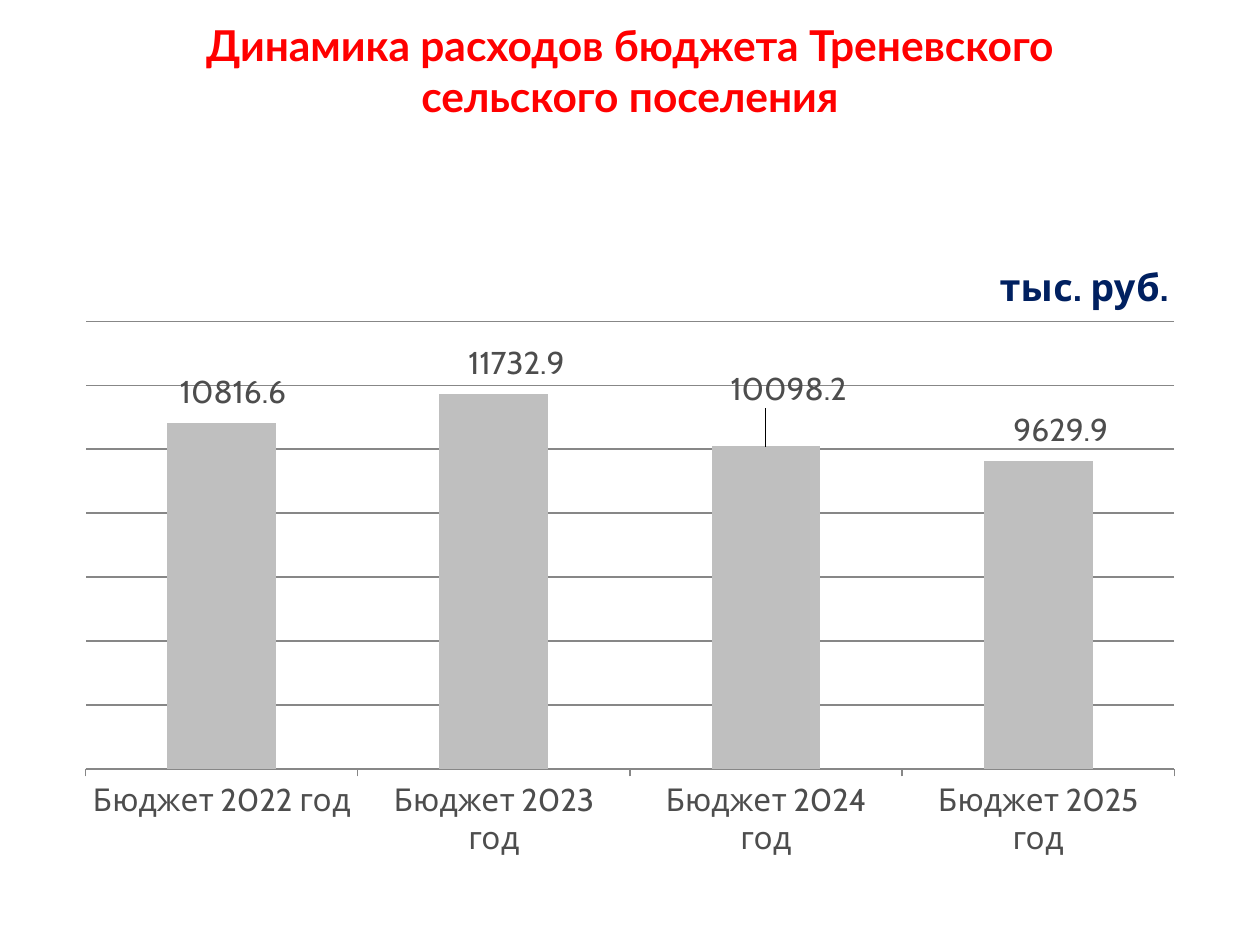
import dataclasses

import pptx
import pptx.chart.data
import pptx.dml.color
import pptx.enum.chart
import pptx.enum.text
import pptx.oxml
import pptx.oxml.ns
import pptx.util

Cm = pptx.util.Cm
Pt = pptx.util.Pt
qn = pptx.oxml.ns.qn


@dataclasses.dataclass(frozen=True)
class Theme:
    red: str = "FF0000"
    navy: str = "002060"
    text: str = "4D4D4D"
    bar: str = "BFBFBF"
    grid: str = "878787"
    head_font: str = "Lato"
    font: str = "Cabin"
    head: float = 24.3
    unit: float = 21.6
    body: float = 18


THEME = Theme()
COSTS = {2022: 10816.6, 2023: 11732.9, 2024: 10098.2, 2025: 9629.9}
SHIFTS = [(0.01, -0.01), (0.02, -0.01), (0.02, -0.05), (0.02, -0.01)]


def tint(color, code):
    color.rgb = pptx.dml.color.RGBColor.from_string(code)


def style(font, name, size, code, bold=False):
    font.name = name
    font.size = Pt(size)
    font.bold = bold
    tint(font.color, code)


def layout(**parts):
    body = "".join(f'<c:{tag} val="{val}"/>' for tag, val in parts.items())
    return pptx.oxml.parse_xml(
        f'<c:layout {pptx.oxml.ns.nsdecls("c")}>'
        f"<c:manualLayout>{body}</c:manualLayout></c:layout>"
    )


def place(parent, after, **parts):
    for old in parent.findall(qn("c:layout")):
        parent.remove(old)
    if after:
        parent.find(qn(after)).addnext(layout(**parts))
    else:
        parent.insert(0, layout(**parts))


def add_head(slide, text):
    box = slide.shapes.add_textbox(Cm(2.54), Cm(0.43), Cm(20.32), Cm(1.98))
    frame = box.text_frame
    frame.word_wrap = True
    frame.vertical_anchor = pptx.enum.text.MSO_ANCHOR.MIDDLE
    frame.text = text
    line = frame.paragraphs[0]
    line.alignment = pptx.enum.text.PP_ALIGN.CENTER
    style(line.runs[0].font, THEME.head_font, THEME.head, THEME.red, True)


def add_unit(chart, text):
    chart.has_title = True
    title = chart.chart_title
    title.text_frame.text = text
    run = title.text_frame.paragraphs[0].runs[0]
    style(run.font, THEME.font, THEME.unit, THEME.navy, True)
    place(title._element, "c:tx", xMode="edge", yMode="edge", x=0.82, y=0.05)


def set_axes(chart):
    cats, vals = chart.category_axis, chart.value_axis
    cats.major_tick_mark = pptx.enum.chart.XL_TICK_MARK.OUTSIDE
    style(cats.tick_labels.font, THEME.font, THEME.body, THEME.text)
    vals.visible = False
    vals.minimum_scale = 0
    vals.maximum_scale = 14000
    vals.major_unit = 2000
    vals.has_major_gridlines = True
    for line in (cats.format.line, vals.major_gridlines.format.line):
        line.width = Pt(0.75)
        tint(line.color, THEME.grid)


def set_bars(chart):
    plot = chart.plots[0]
    plot.gap_width = 150
    plot.vary_by_categories = False
    bars = plot.series[0]
    bars.format.fill.solid()
    tint(bars.format.fill.fore_color, THEME.bar)
    end = pptx.enum.chart.XL_LABEL_POSITION.OUTSIDE_END
    marks = bars.data_labels
    marks.show_value = True
    marks.position = end
    style(marks.font, THEME.font, THEME.body, THEME.text)
    for num, (x, y) in enumerate(SHIFTS):
        mark = bars.points[num].data_label
        mark.position = end
        style(mark.font, THEME.font, THEME.body, THEME.text)
        node = marks._element.findall(qn("c:dLbl"))[num]
        place(node, "c:idx", x=x, y=y)


def add_costs(slide):
    data = pptx.chart.data.CategoryChartData()
    data.categories = [f"Бюджет {year} год" for year in COSTS]
    data.add_series("Series 1", COSTS.values())
    kind = pptx.enum.chart.XL_CHART_TYPE.COLUMN_CLUSTERED
    chart = slide.shapes.add_chart(
        kind, Cm(1.27), Cm(4.45), Cm(22.86), Cm(13.08), data
    ).chart
    style(chart.font, THEME.font, THEME.body, THEME.text)
    chart.has_legend = False
    add_unit(chart, "тыс. руб.")
    set_axes(chart)
    set_bars(chart)
    area = chart._chartSpace.find(".//" + qn("c:plotArea"))
    place(area, None, layoutTarget="inner", xMode="edge", yMode="edge",
          x=0.02, y=0.155, w=0.96, h=0.69)


def main():
    deck = pptx.Presentation()
    deck.slide_width = Cm(25.4)
    deck.slide_height = Cm(19.05)
    slide = deck.slides.add_slide(deck.slide_layouts[6])
    add_head(slide, "Динамика расходов бюджета Треневского сельского поселения")
    add_costs(slide)
    deck.save("out.pptx")


if __name__ == "__main__":
    main()
